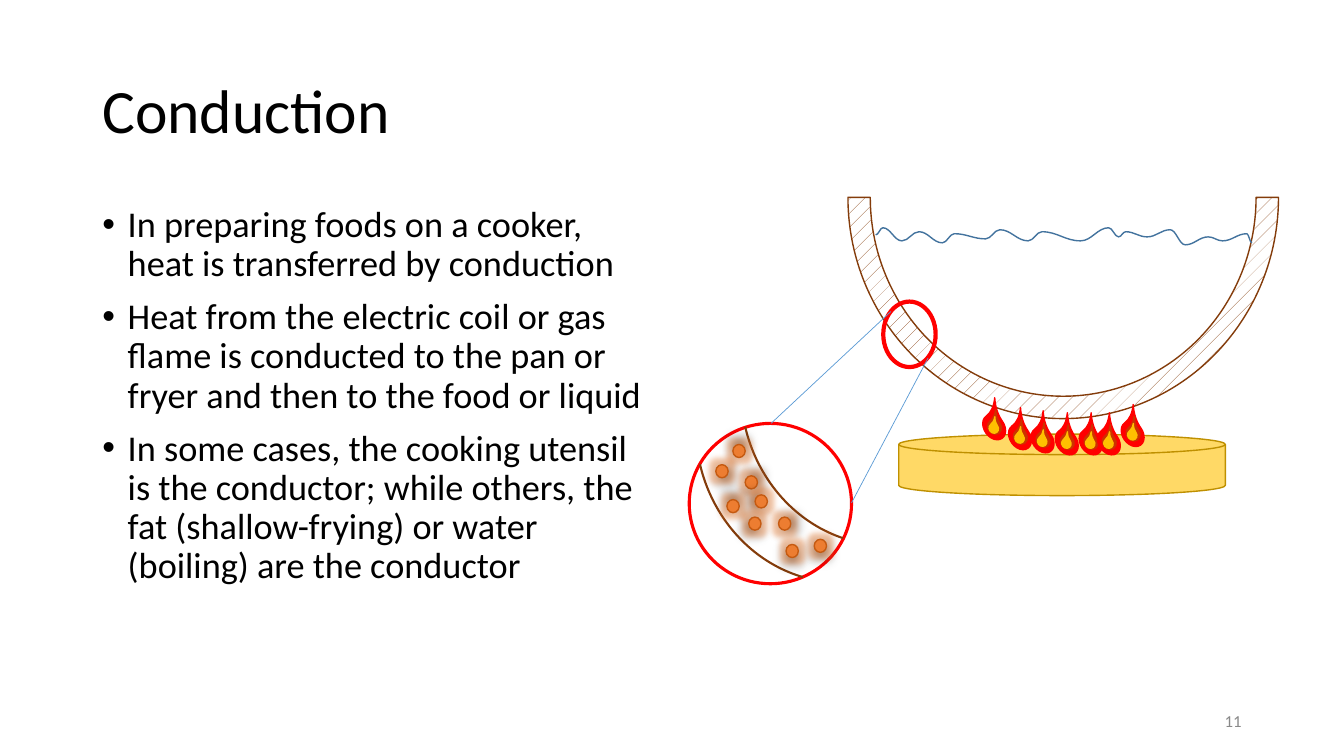
from lxml.etree import SubElement as Sub
from pptx import Presentation
from pptx.dml.color import RGBColor as Rgb
from pptx.enum.dml import MSO_PATTERN as Pat
from pptx.enum.shapes import MSO_CONNECTOR as Conn, MSO_SHAPE as Kind
from pptx.enum.text import MSO_ANCHOR as Anchor, PP_ALIGN as Align
from pptx.oxml.ns import qn
from pptx.util import Cm, Pt

INK = {
    "text": "000000", "page": "898989", "white": "FFFFFF", "pan": "843C0B",
    "plate": "FFD966", "rim": "BF9000", "red": "FF0000", "ember": "CC3300",
    "gold": "FFC000", "water": "43739E", "zoom": "5B9BD5",
    "atom": "ED7D31", "edge": "C55A11",
}


def ink(name):
    return Rgb.from_string(INK[name])


class Board:
    font = "Calibri"

    def __init__(self, slide):
        self.slide = slide
        self.shapes = slide.shapes

    def text(self, box, lines, size, color="text", anchor=Anchor.TOP,
             align=Align.LEFT, bullet=False, lead=None):
        frame = self.shapes.add_textbox(*map(Cm, box)).text_frame
        frame.word_wrap = True
        frame.vertical_anchor = anchor
        for i, line in enumerate(lines):
            para = frame.add_paragraph() if i else frame.paragraphs[0]
            para.alignment = align
            if lead:
                para.line_spacing = lead
            if i:
                para.space_before = Pt(10)
            if bullet:
                self.bullet(para)
            run = para.add_run()
            run.text = line
            run.font.name = self.font
            run.font.size = Pt(size)
            run.font.color.rgb = ink(color)

    def bullet(self, para):
        props = para._p.get_or_add_pPr()
        props.set("marL", str(Cm(0.64)))
        props.set("indent", str(Cm(-0.64)))
        Sub(props, qn("a:buFont"), typeface="Arial")
        Sub(props, qn("a:buChar"), char="•")

    def dress(self, shape, fill, line, width):
        shape.shadow.inherit = False
        if fill:
            shape.fill.solid()
            shape.fill.fore_color.rgb = ink(fill)
        else:
            shape.fill.background()
        shape.line.color.rgb = ink(line)
        shape.line.width = Pt(width)
        return shape

    def shape(self, kind, box, fill, line, width=1, adj=(), turn=0, flip="", host=None):
        shape = (host or self.shapes).add_shape(kind, *map(Cm, box))
        for i, value in enumerate(adj):
            shape.adjustments[i] = value
        shape.rotation = turn
        frame = shape.element.spPr.find(qn("a:xfrm"))
        for axis in flip:
            frame.set("flip" + axis, "1")
        return self.dress(shape, fill, line, width)

    def line(self, start, end, color, width):
        link = self.shapes.add_connector(Conn.STRAIGHT, *map(Cm, start + end))
        link.line.color.rgb = ink(color)
        link.line.width = Pt(width)
        Sub(link.element.spPr, qn("a:effectLst"))

    def wave(self, knots, color):
        pen = self.shapes.build_freeform(*map(Cm, knots[0]))
        pen.add_line_segments([(Cm(x), Cm(y)) for x, y in knots[1:]], close=False)
        shape = self.dress(pen.convert_to_shape(), None, color, 1)
        # Bend each segment with level handles at its crest and trough
        dots = [(int(dot.get("x")), int(dot.get("y")))
                for dot in shape.element.spPr.iter(qn("a:pt"))]
        parts = list(shape.element.spPr.iter(qn("a:lnTo")))
        for part, (x1, y1), (x2, y2) in zip(parts, dots, dots[1:]):
            reach = (x2 - x1) * 2 // 5
            part.remove(part[0])
            part.tag = qn("a:cubicBezTo")
            for x, y in ((x1 + reach, y1), (x2 - reach, y2), (x2, y2)):
                Sub(part, qn("a:pt"), x=str(x), y=str(y))

    def flame(self, left, top):
        group = self.shapes.add_group_shape().shapes
        for dx, dy, wide, high, turn, color in LAYERS:
            self.shape(Kind.TEAR, (left + dx, top + dy, wide, high), color, color,
                       adj=[1.73], turn=turn, host=group)

    def atom(self, left, top, angle):
        dot = self.shape(Kind.FLOWCHART_CONNECTOR, (left, top, 0.31, 0.33), "atom", "edge")
        glow = dot.element.spPr.find(qn("a:effectLst"))
        halo = Sub(glow, qn("a:glow"), rad=str(Pt(8)))
        shade = Sub(glow, qn("a:outerShdw"), blurRad=str(Pt(4)), dist=str(Pt(3)),
                    dir=str(angle * 60000), rotWithShape="0")
        for part, color in ((halo, "atom"), (shade, "text")):
            tint = Sub(part, qn("a:srgbClr"), val=INK[color])
            Sub(tint, qn("a:alpha"), val="40000")


POINTS = [
    "In preparing foods on a cooker, heat is transferred by conduction",
    "Heat from the electric coil or gas flame is conducted to the pan or fryer "
    "and then to the food or liquid",
    "In some cases, the cooking utensil is the conductor; while others, the fat "
    "(shallow-frying) or water (boiling) are the conductor",
]
LAYERS = [
    (0, 0, 0.51, 0.69, 324.6, "red"),
    (0.1, 0.15, 0.33, 0.38, 322.6, "ember"),
    (0.13, 0.25, 0.23, 0.25, 322.6, "gold"),
]
FLAMES = [(24.8, 10.42), (25.45, 10.67), (26.02, 10.75), (26.63, 10.8),
          (27.23, 10.8), (27.69, 10.8), (28.29, 10.59)]
WATER = [
    (22.07, 5.92), (22.25, 5.74), (22.73, 6.07), (23.16, 5.84), (23.75, 6.12),
    (24.05, 5.89), (24.84, 6.02), (25.2, 5.79), (25.91, 6.07), (26.26, 5.84),
    (27.23, 6.07), (27.94, 5.74), (28.19, 5.97), (28.37, 5.84), (28.91, 5.97),
    (29.49, 5.79), (29.87, 6.17), (30.45, 5.97), (30.81, 6.07), (31.42, 5.89),
    (31.55, 6.12),
]
ATOMS = [
    (18.47, 11.2, 270), (18.78, 11.99, 315), (19.03, 12.47, 180),
    (19.62, 13.03, 0), (18.32, 12.59, 270), (20.52, 13.59, 90),
    (18.04, 11.71, 45), (18.87, 13.03, 135), (19.81, 13.72, 90),
]


def main():
    deck = Presentation()
    deck.slide_width, deck.slide_height = Cm(33.87), Cm(19.05)
    board = Board(deck.slides.add_slide(deck.slide_layouts[6]))

    # Pan
    pan = board.shape(Kind.BLOCK_ARC, (21.37, -0.6, 10.85, 11.15), None, "pan",
                      adj=[108, 0, 0.052], flip="V")
    pan.fill.patterned()
    pan.fill.pattern = Pat.PERCENT_5
    pan.fill.fore_color.rgb = ink("pan")
    pan.fill.back_color.rgb = ink("white")

    # Title and points
    board.text((2.33, 1.02, 29.21, 3.68), ["Conduction"], 44,
               anchor=Anchor.MIDDLE, lead=0.9)
    board.text((2.33, 5.07, 14.4, 12.09), POINTS, 25.9, bullet=True, lead=0.9)

    # Burner, flames and water
    board.shape(Kind.FLOWCHART_MAGNETIC_DISK, (22.65, 10.94, 8.23, 1.55), "plate", "rim")
    for spot in FLAMES:
        board.flame(*spot)
    board.wave(WATER, "water")

    # Zoom rings and guides
    board.shape(Kind.FLOWCHART_CONNECTOR, (22.26, 7.6, 1.32, 1.65), None, "red", 3)
    board.shape(Kind.FLOWCHART_CONNECTOR, (17.37, 10.67, 4.09, 4.04), None, "red", 2.25)
    board.line((22.45, 7.85), (19.43, 10.67), "zoom", 0.5)
    board.line((23.39, 9.02), (21.46, 12.67), "zoom", 0.5)

    # Pan wall and atoms inside the zoom
    for left, top, start in ((17.53, 6.86, 172.08), (18.67, 5.92, 173.29)):
        board.shape(Kind.ARC, (left, top, 7.26, 7.82), None, "pan", 1.5,
                    adj=[start, 208.93], turn=357, flip="HV")
    for spot in ATOMS:
        board.atom(*spot)

    # Page number
    board.text((23.92, 17.65, 7.62, 1.02), ["11"], 12, "page",
               anchor=Anchor.MIDDLE, align=Align.RIGHT)
    deck.save("out.pptx")


if __name__ == "__main__":
    main()
